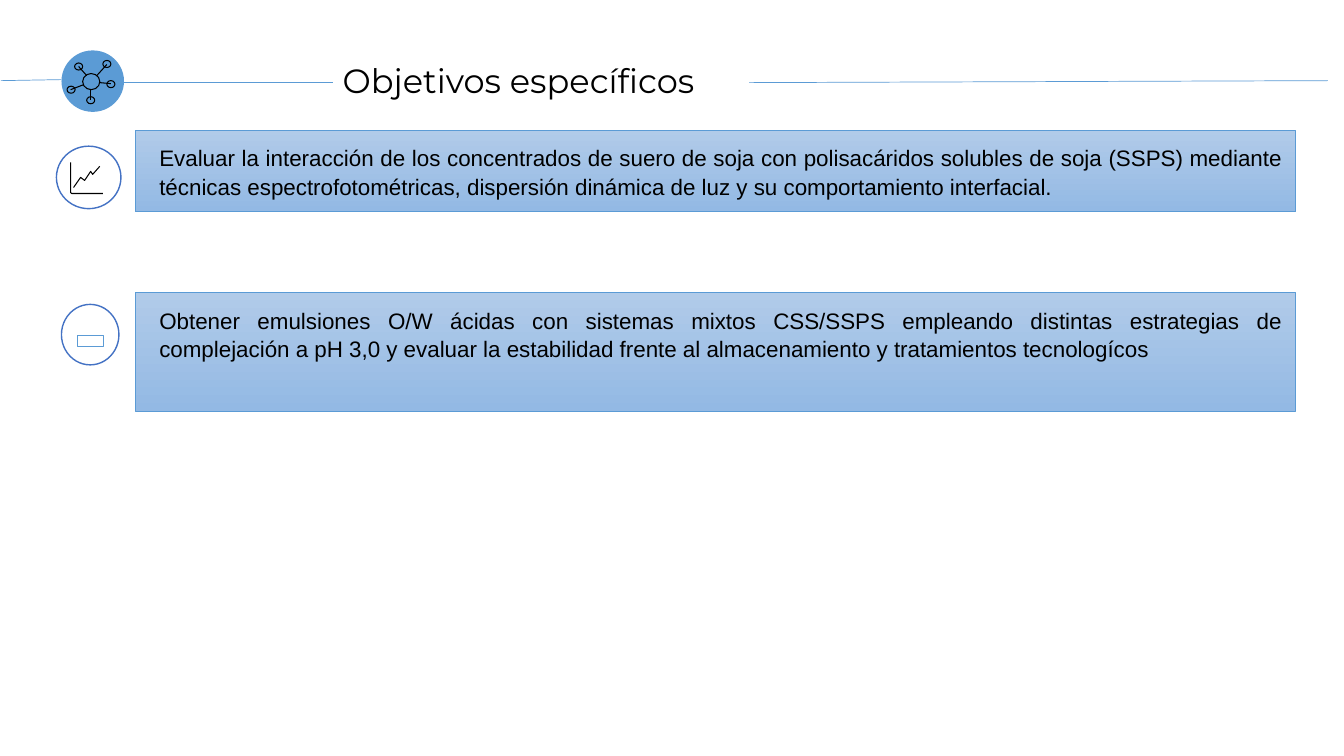
from pptx import Presentation
from pptx import util as u
from pptx.dml.color import RGBColor
from pptx.enum import shapes, text
from pptx.oxml import xmlchemy

TITLE = "Objetivos específicos"
OBJECTIVES = [
    (1.29, 0.81, "Evaluar la interacción de los concentrados de suero de soja con polisacáridos "
     "solubles de soja (SSPS) mediante técnicas espectrofotométricas, dispersión dinámica de luz "
     "y su comportamiento interfacial."),
    (2.9, 1.18, "Obtener emulsiones O/W ácidas con sistemas mixtos CSS/SSPS empleando distintas "
     "estrategias de complejación a pH 3,0 y evaluar la estabilidad frente al almacenamiento "
     "y tratamientos tecnologícos"),
]
HEADER_LINES = [(1.23, 0.82, 3.3, 0.82), (7.43, 0.82, 13.17, 0.8), (0.01, 0.8, 0.61, 0.79)]
NODES = [(1.06, 0.635), (0.78, 0.66), (0.705, 0.89), (0.9, 0.995), (1.1, 0.835)]
SPOKES = [(0.78, 0.66, 0.86, 0.75), (0.96, 0.75, 1.06, 0.64), (1.1, 0.83, 0.99, 0.82),
          (0.9, 0.99, 0.9, 0.89), (0.7, 0.89, 0.83, 0.84)]
CHART_STROKES = [
    [(0.7, 1.61), (0.7, 1.91), (0.71, 1.92), (1.02, 1.92)],
    [(0.73, 1.86), (0.8, 1.76), (0.84, 1.79), (0.9, 1.7), (0.92, 1.73), (0.99, 1.65)],
]
THEME = {
    "blue": "5B9BD5", "ring": "4472C4", "ink": "000000", "white": "FFFFFF",
    "gradient": ("B1CBE9", "93B9E4"),
    "title": {"size": u.Pt(24), "name": "Montserrat"},
    "body": {"size": u.Pt(16), "name": "Arial"},
    "hair": 0.5, "stroke": 0.75, "outline": 1,
}
BODY_FRAME = {"word_wrap": True, "vertical_anchor": text.MSO_ANCHOR.TOP,
              **{f"margin_{side}": u.Inches(0.13) for side in ("left", "top", "right", "bottom")}}
BODY_PARA = {"alignment": text.PP_ALIGN.JUSTIFY, "space_before": u.Pt(6), "line_spacing": 1.05}


def color(name):
    return RGBColor.from_string(THEME.get(name, name))


def inches(*lengths):
    return [u.Inches(length) for length in lengths]


def apply(target, values):
    for name, value in values.items():
        setattr(target, name, value)


def set_line(shape, name, width):
    shape.line.color.rgb = color(name)
    shape.line.width = u.Pt(THEME[width])


def add_shape(parent, kind, place, fill=None, line=None, width="outline"):
    shape = parent.add_shape(kind, *inches(*place))
    shape.shadow.inherit = False
    if fill:
        shape.fill.solid()
        shape.fill.fore_color.rgb = color(fill)
    else:
        shape.fill.background()
    if line:
        set_line(shape, line, width)
    else:
        shape.line.fill.background()
    return shape


def add_line(parent, ends, name, width):
    line = parent.add_connector(shapes.MSO_CONNECTOR.STRAIGHT, *inches(*ends))
    set_line(line, name, width)
    properties = line._element.spPr
    properties.append(xmlchemy.OxmlElement("a:effectLst"))


def add_stroke(parent, points):
    start, *rest = [inches(*point) for point in points]
    builder = parent.build_freeform(*start)
    builder.add_line_segments(rest, close=False)
    stroke = builder.convert_to_shape()
    stroke.shadow.inherit = False
    stroke.fill.background()
    set_line(stroke, "ink", "stroke")


def write(para, words, style):
    span = para.add_run()
    span.text = words
    apply(span.font, THEME[style])
    span.font.color.rgb = color("ink")


def add_objective(parent, top, height, words):
    box = add_shape(parent, RECT, (1.34, top, 11.51, height), line="blue", width="hair")
    box.fill.gradient()
    box.fill.gradient_angle = 270
    for stop, shade in zip(box.fill.gradient_stops, THEME["gradient"]):
        stop.color.rgb = color(shade)
    apply(box.text_frame, BODY_FRAME)
    para = box.text_frame.paragraphs[0]
    apply(para, BODY_PARA)
    para._p.get_or_add_pPr().set("marL", str(u.Inches(0.11)))
    write(para, words, "body")


RECT, OVAL = shapes.MSO_SHAPE.RECTANGLE, shapes.MSO_SHAPE.OVAL


def main():
    deck = Presentation()
    deck.slide_width, deck.slide_height = inches(13.33, 7.5)
    page = deck.slides.add_slide(deck.slide_layouts[6]).shapes

    network = page.add_group_shape().shapes
    add_shape(network, OVAL, (0.61, 0.5, 0.62, 0.61), "blue")
    for x, y in NODES:
        add_shape(network, OVAL, (x - 0.04, y - 0.035, 0.08, 0.07), line="ink", width="stroke")
    add_shape(network, OVAL, (0.82, 0.73, 0.17, 0.16), line="ink", width="stroke")
    for ends in SPOKES:
        add_line(network, ends, "ink", "stroke")

    for ends in HEADER_LINES:
        add_line(page, ends, "blue", "hair")
    title = page.add_textbox(*inches(3.3, 0.55, 5.58, 0.5)).text_frame
    title.word_wrap = True
    write(title.paragraphs[0], TITLE, "title")

    for objective in OBJECTIVES:
        add_objective(page, *objective)

    trend = page.add_group_shape().shapes
    add_shape(trend, OVAL, (0.56, 1.45, 0.64, 0.62), "white", "ring")
    for points in CHART_STROKES:
        add_stroke(trend, points)

    badge = page.add_group_shape().shapes
    add_shape(badge, OVAL, (0.61, 3.02, 0.57, 0.6), "white", "ring")
    add_shape(badge, RECT, (0.77, 3.33, 0.26, 0.11), "white", "blue")

    deck.save("out.pptx")


if __name__ == "__main__":
    main()
